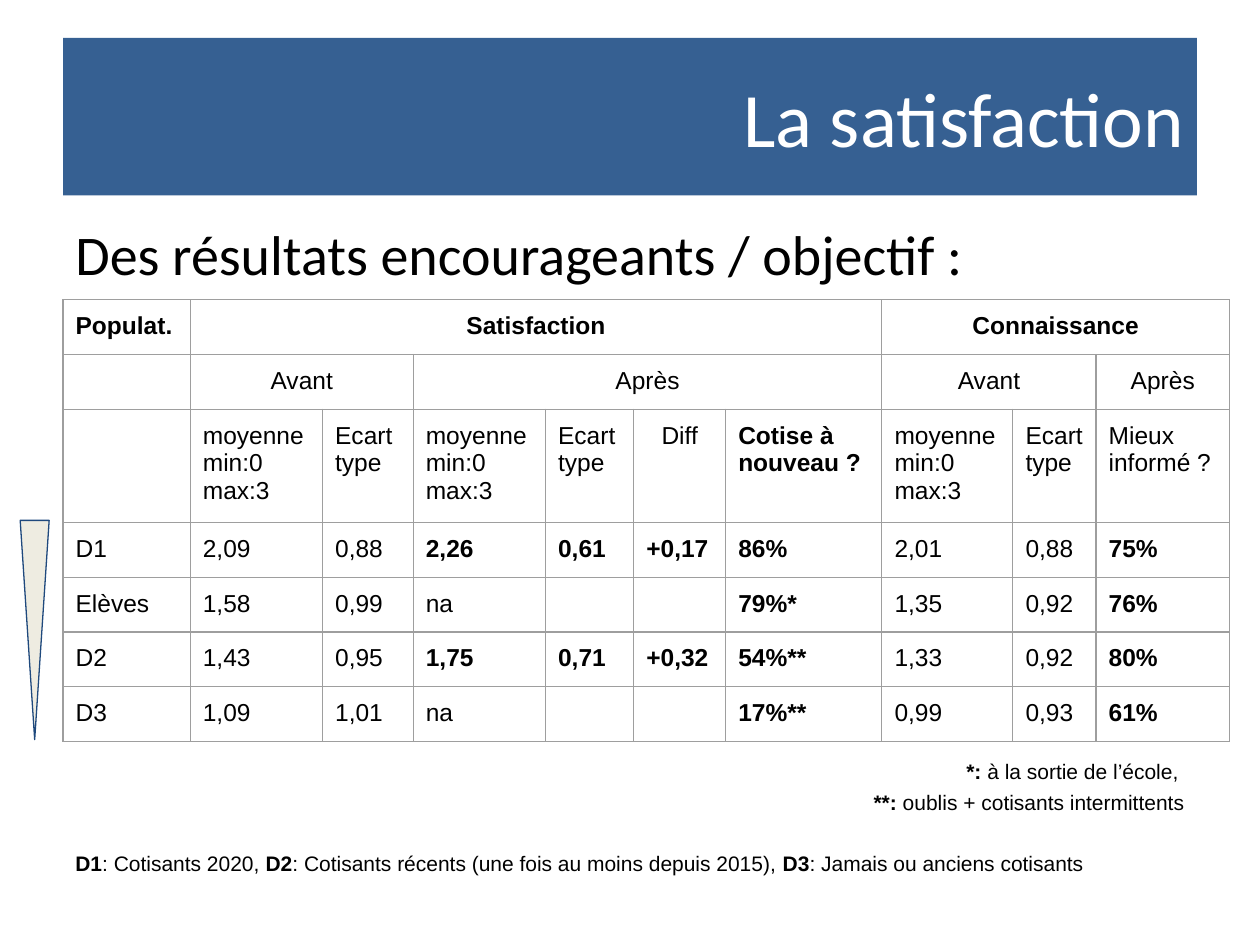
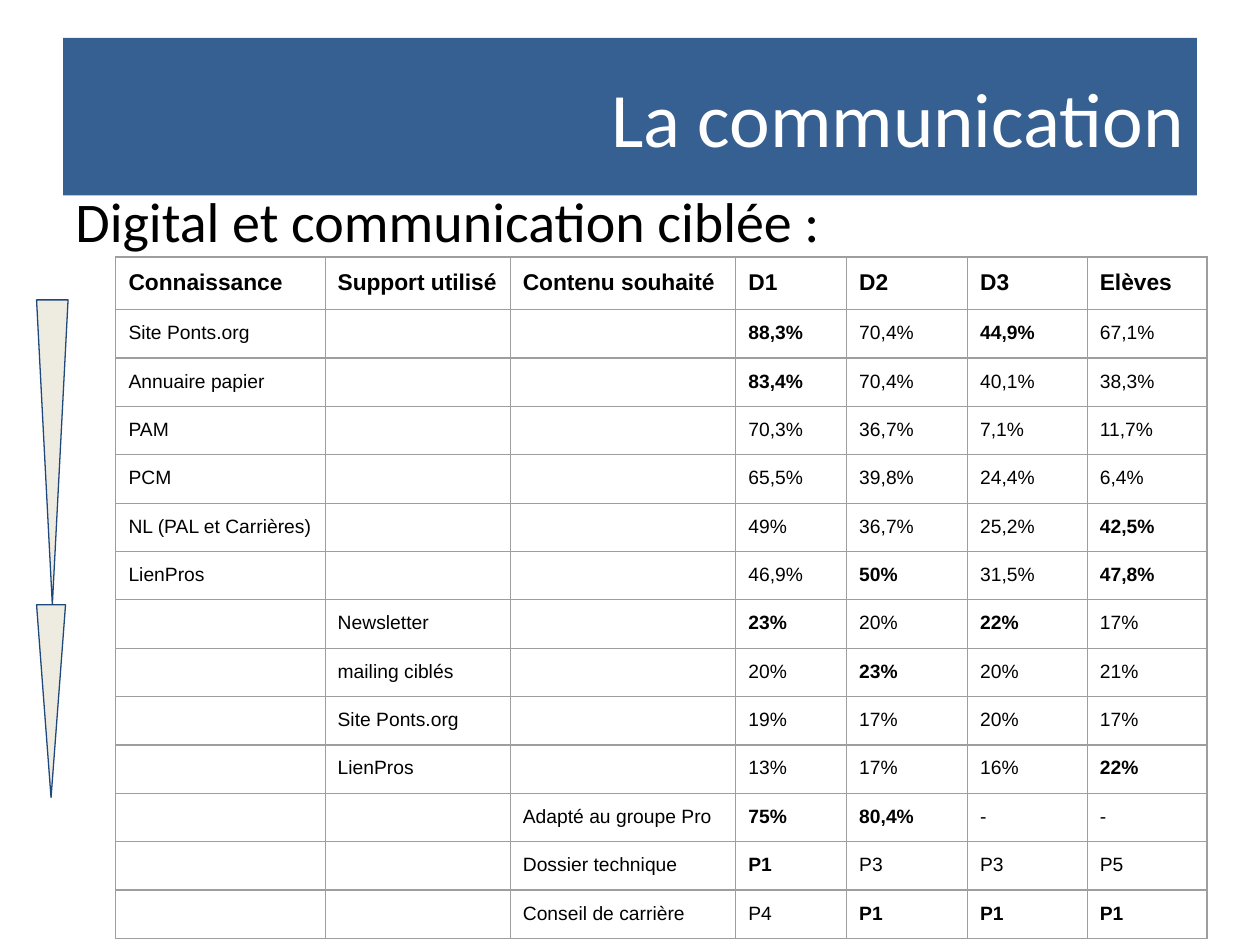
from dataclasses import dataclass

import pptx
import pptx.dml.color
import pptx.enum.shapes
import pptx.enum.text
import pptx.oxml
import pptx.oxml.ns
import pptx.util
from pptx.util import Inches

ALIGN = pptx.enum.text.PP_ALIGN


@dataclass(frozen=True)
class Theme:
    band: str = "366092"
    band_text: str = "FFFFFF"
    text: str = "000000"
    grid: str = "9E9E9E"
    wedge: str = "EEECE1"
    wedge_line: str = "1F497D"
    heading_font: str = "Calibri"
    body_font: str = "Arial"
    title_size: float = 44
    heading_size: float = 32
    note_size: float = 12
    line_width: float = 0.75


def rgb(value):
    return pptx.dml.color.RGBColor.from_string(value)


class Deck:
    def __init__(self, theme):
        self.theme = theme
        self.presentation = pptx.Presentation()
        self.presentation.slide_width = Inches(10)
        self.presentation.slide_height = Inches(7.5)
        self.slide = None

    def fill_text(self, frame, text, size, font, color, align=ALIGN.LEFT, gap=0, bold=False):
        """Text between bars is bold; each line becomes a paragraph."""
        for index, line in enumerate(text.split("\n")):
            paragraph = frame.paragraphs[0] if index == 0 else frame.add_paragraph()
            paragraph.alignment = align
            paragraph.space_before = pptx.util.Pt(gap if index else 0)
            paragraph.font.size = pptx.util.Pt(size)
            paragraph.font.name = font
            for position, part in enumerate(line.split("|")):
                if not part:
                    continue
                run = paragraph.add_run()
                run.text = part
                run.font.size = pptx.util.Pt(size)
                run.font.name = font
                run.font.bold = bold or position % 2 == 1
                run.font.color.rgb = rgb(color)

    def add_slide(self, title):
        theme = self.theme
        self.slide = self.presentation.slides.add_slide(self.presentation.slide_layouts[5])
        band = self.slide.shapes.title
        band.left, band.top = Inches(0.5), Inches(0.3)
        band.width, band.height = Inches(9), Inches(1.25)
        band.fill.solid()
        band.fill.fore_color.rgb = rgb(theme.band)
        frame = band.text_frame
        frame.auto_size = pptx.enum.text.MSO_AUTO_SIZE.NONE
        frame.vertical_anchor = pptx.enum.text.MSO_ANCHOR.MIDDLE
        self.fill_text(frame, title, theme.title_size, theme.heading_font,
                       theme.band_text, ALIGN.RIGHT)

    def add_text(self, text, top, height, size, font, align=ALIGN.LEFT, gap=0):
        box = self.slide.shapes.add_textbox(Inches(0.5), Inches(top), Inches(9), Inches(height))
        box.text_frame.word_wrap = True
        self.fill_text(box.text_frame, text, size, font, self.theme.text, align, gap)

    def add_heading(self, text, top):
        self.add_text(text, top, 0.65, self.theme.heading_size, self.theme.heading_font)

    def add_note(self, text, top, height, align=ALIGN.LEFT):
        self.add_text(text, top, height, self.theme.note_size, self.theme.body_font, align, 3.6)

    def add_wedge(self, left, top, width, height):
        wedge = self.slide.shapes.add_shape(
            pptx.enum.shapes.MSO_SHAPE.ISOSCELES_TRIANGLE,
            Inches(left), Inches(top), Inches(width), Inches(height))
        wedge.rotation = 180
        wedge.shadow.inherit = False
        wedge.fill.solid()
        wedge.fill.fore_color.rgb = rgb(self.theme.wedge)
        wedge.line.color.rgb = rgb(self.theme.wedge_line)
        wedge.line.width = pptx.util.Pt(self.theme.line_width)

    def outline(self, cell):
        properties = cell._tc.get_or_add_tcPr()
        width = pptx.util.Pt(self.theme.line_width)
        for side in ("lnL", "lnR", "lnT", "lnB"):
            properties.append(pptx.oxml.parse_xml(
                f'<a:{side} {pptx.oxml.ns.nsdecls("a")} w="{width}"><a:solidFill>'
                f'<a:srgbClr val="{self.theme.grid}"/></a:solidFill></a:{side}>'))

    def add_table(self, left, top, widths, heights, rows, size,
                  header_size, spans=(), centred=()):
        table = self.slide.shapes.add_table(
            len(rows), len(widths), Inches(left), Inches(top),
            Inches(sum(widths)), Inches(sum(heights))).table
        table.first_row = table.horz_banding = False
        for column, width in zip(table.columns, widths):
            column.width = Inches(width)
        for row, height in zip(table.rows, heights):
            row.height = Inches(height)
        for r, row in enumerate(rows):
            for c, text in enumerate(row):
                cell = table.cell(r, c)
                cell.margin_left = cell.margin_right = Inches(0.1)
                cell.margin_top = cell.margin_bottom = Inches(0.1)
                self.outline(cell)
                cell.fill.background()
                self.fill_text(cell.text_frame, text, size if r else header_size,
                               self.theme.body_font, self.theme.text,
                               ALIGN.CENTER if (r, c) in centred else ALIGN.LEFT, bold=r == 0)
        for r, first, last in spans:
            table.cell(r, first).merge(table.cell(r, last))


def build_satisfaction(deck):
    deck.add_slide("La satisfaction")
    deck.add_heading("Des résultats encourageants / objectif :", 1.69)
    mean, deviation = "moyenne\nmin:0 max:3", "Ecart type"
    results = [
        ["Populat.", "Satisfaction", "", "", "", "", "", "Connaissance", "", ""],
        ["", "Avant", "", "Après", "", "", "", "Avant", "", "Après"],
        ["", mean, deviation, mean, deviation, "Diff", "|Cotise à nouveau ?",
         mean, deviation, "Mieux informé ?"],
        ["D1", "2,09", "0,88", "|2,26", "|0,61", "|+0,17", "|86%", "2,01", "0,88", "|75%"],
        ["Elèves", "1,58", "0,99", "na", "", "", "|79%*", "1,35", "0,92", "|76%"],
        ["D2", "1,43", "0,95", "|1,75", "|0,71", "|+0,32", "|54%**", "1,33", "0,92", "|80%"],
        ["D3", "1,09", "1,01", "na", "", "", "|17%**", "0,99", "0,93", "|61%"],
    ]
    spans = [(0, 1, 6), (0, 7, 9), (1, 1, 2), (1, 3, 6), (1, 7, 8)]
    centred = {(r, first) for r, first, last in spans} | {(1, 9), (2, 5)}
    deck.add_table(0.5, 2.38, [1.01, 1.05, 0.72, 1.05, 0.7, 0.73, 1.24, 1.04, 0.66, 1.06],
                   [0.43, 0.43, 0.86] + [0.43] * 4, results, 14, 14, spans, centred)
    deck.add_note("|*: |à la sortie de l’école, \n|**: |oublis + cotisants intermittents",
                  5.97, 0.55, ALIGN.RIGHT)
    deck.add_note("|D1|: Cotisants 2020,| D2|: Cotisants récents (une fois au moins "
                  "depuis 2015),| D3|: Jamais ou anciens cotisants", 6.7, 0.3)
    deck.add_wedge(0.16, 4.13, 0.23, 1.74)


def build_communication(deck):
    deck.add_slide("La communication")
    deck.add_heading("Digital et communication ciblée :", 1.43)
    awareness = [
        ["Site Ponts.org", "|88,3%", "70,4%", "|44,9%", "67,1%"],
        ["Annuaire papier", "|83,4%", "70,4%", "40,1%", "38,3%"],
        ["PAM", "70,3%", "36,7%", "7,1%", "11,7%"],
        ["PCM", "65,5%", "39,8%", "24,4%", "6,4%"],
        ["NL (PAL et Carrières)", "49%", "36,7%", "25,2%", "|42,5%"],
        ["LienPros", "46,9%", "|50%", "31,5%", "|47,8%"],
    ]
    channels = [
        ["Newsletter", "|23%", "20%", "|22%", "17%"],
        ["mailing ciblés", "20%", "|23%", "20%", "21%"],
        ["Site Ponts.org", "19%", "17%", "20%", "17%"],
        ["LienPros", "13%", "17%", "16%", "|22%"],
    ]
    contents = [
        ["Adapté au groupe Pro", "|75%", "|80,4%", "-", "-"],
        ["Dossier technique", "|P1", "P3", "P3", "P5"],
        ["Conseil de carrière", "P4", "|P1", "|P1", "|P1"],
    ]
    rows = [["Connaissance", "Support utilisé", "Contenu souhaité", "D1", "D2", "D3", "Elèves"]]
    for position, group in enumerate((awareness, channels, contents)):
        for label, *values in group:
            labels = ["", "", ""]
            labels[position] = label
            rows.append(labels + values)
    deck.add_table(0.92, 2.04, [1.66, 1.47, 1.79, 0.88, 0.96, 0.95, 0.95],
                   [0.4] + [0.37] * 13, rows, 11, 13)
    deck.add_wedge(0.29, 2.38, 0.25, 2.42)
    deck.add_wedge(0.29, 4.8, 0.23, 1.53)


def main():
    deck = Deck(Theme())
    build_satisfaction(deck)
    build_communication(deck)
    deck.presentation.save("out.pptx")


if __name__ == "__main__":
    main()
